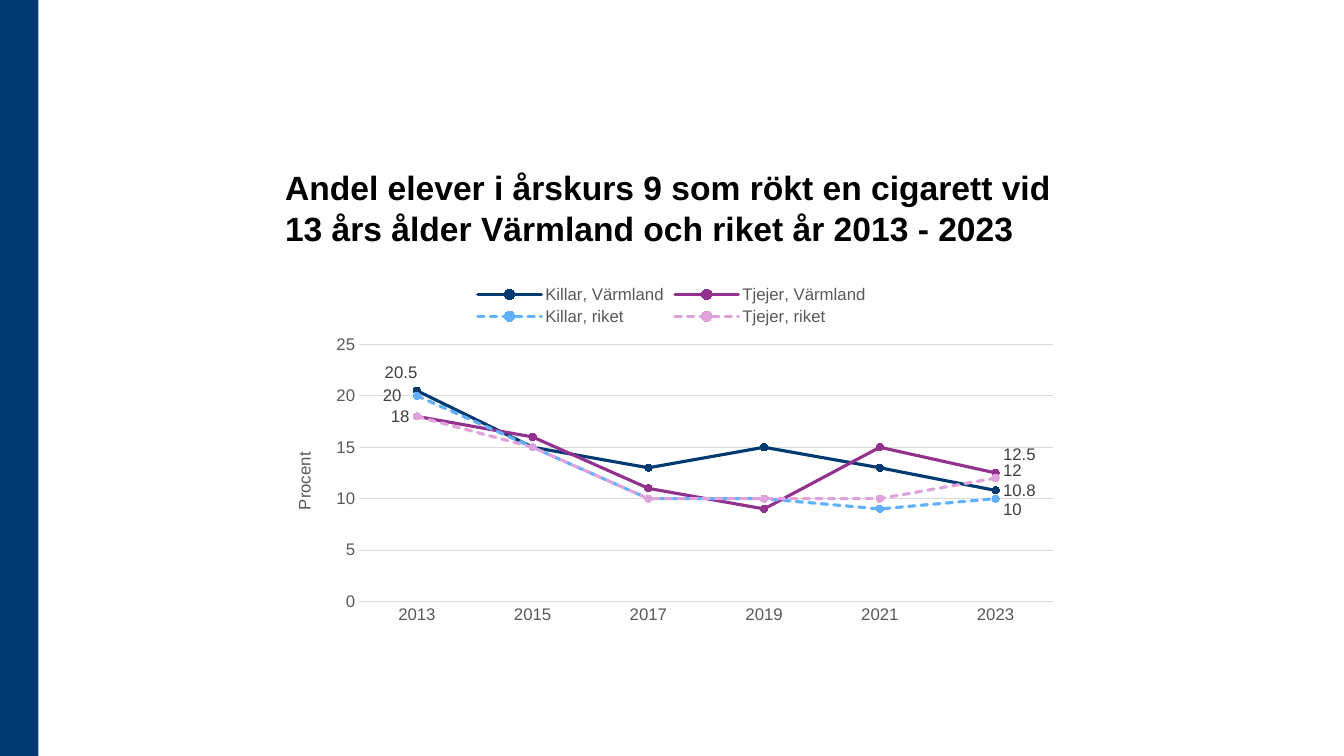
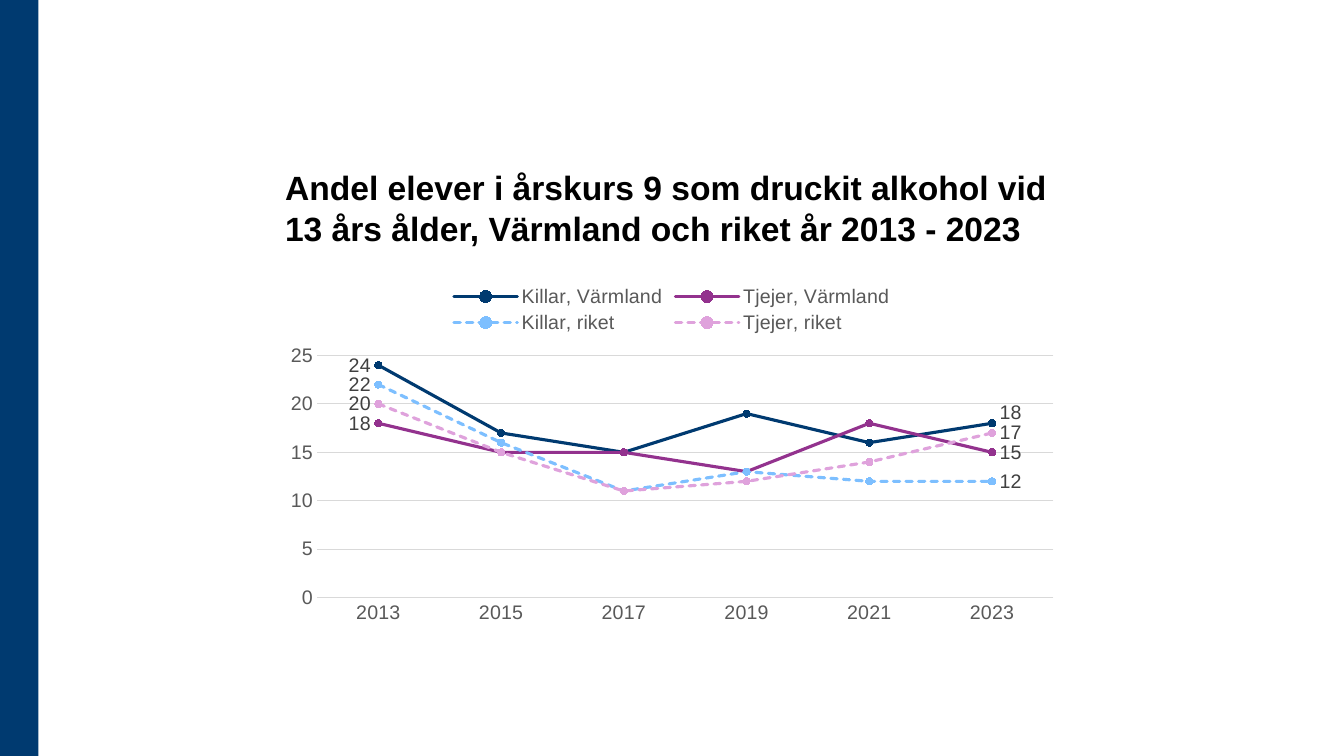
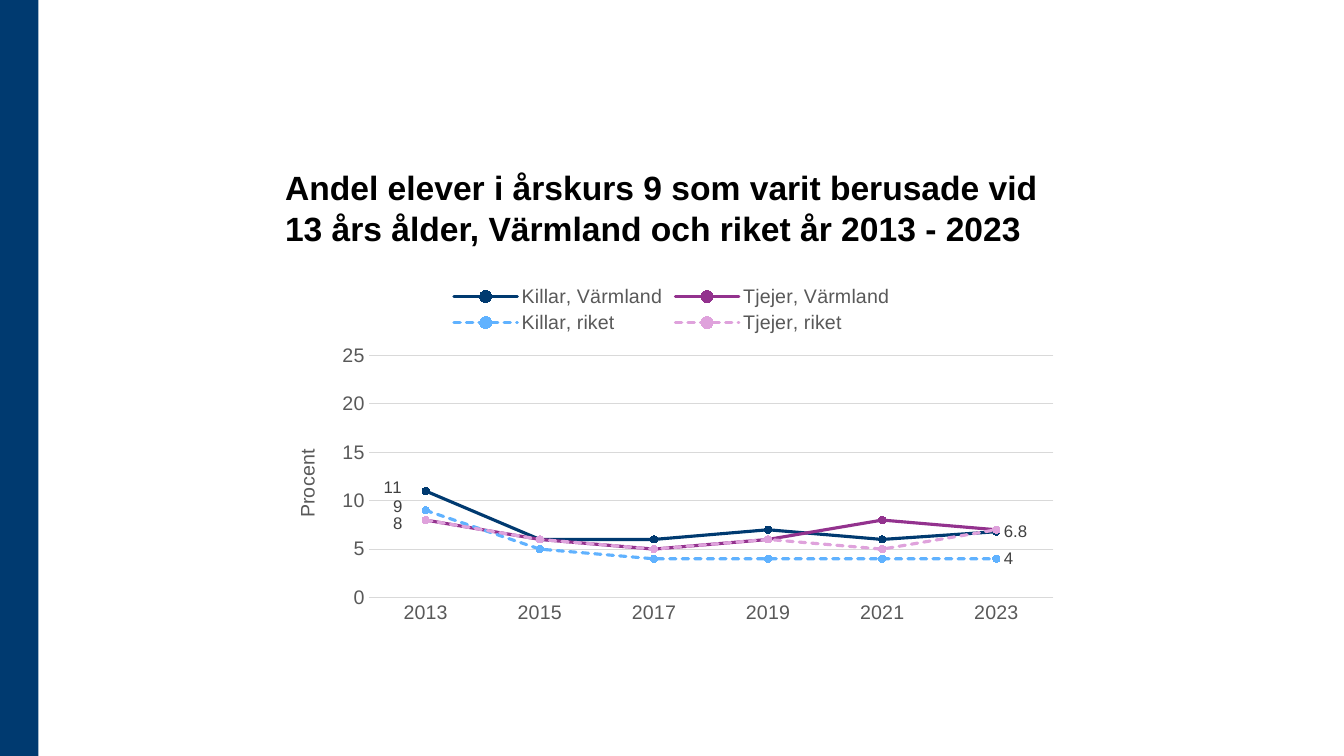
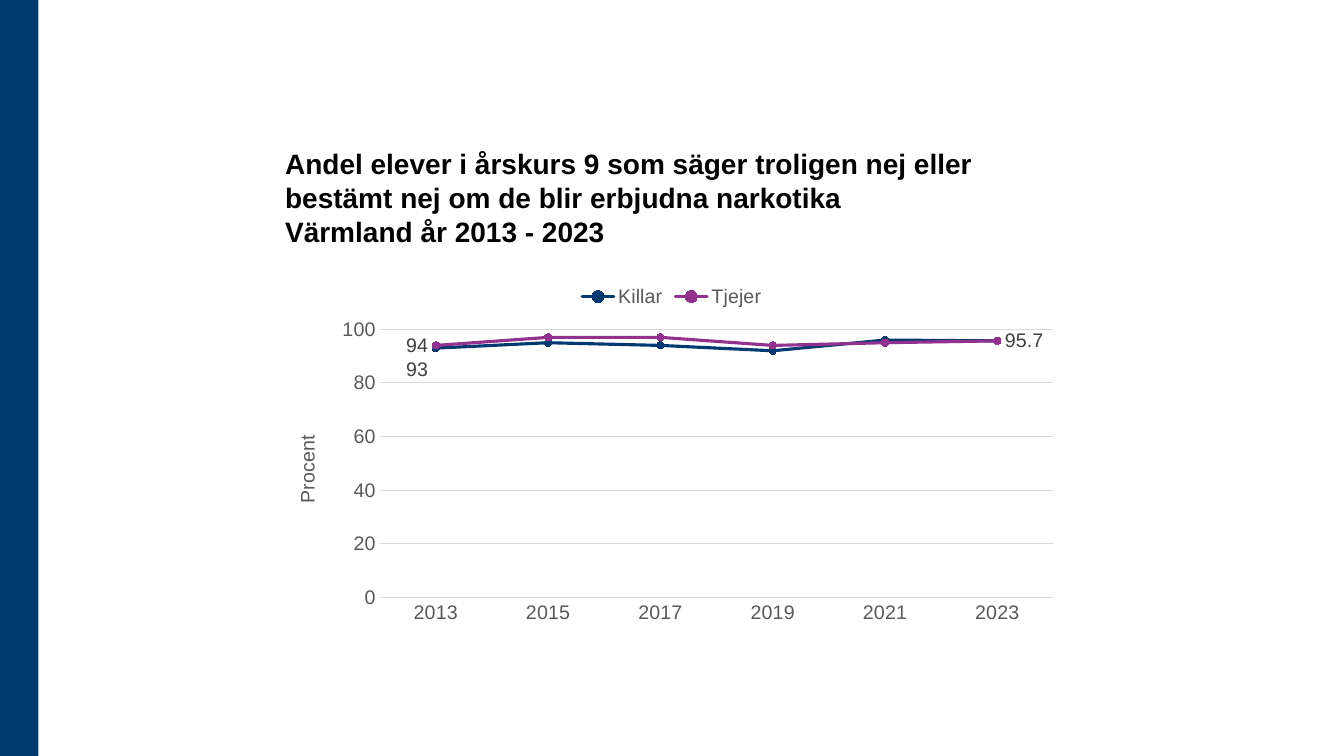
import lxml.etree
import pptx
import pptx.chart.data
import pptx.dml.color
import pptx.enum.chart
import pptx.enum.dml
import pptx.enum.shapes
import pptx.enum.text
import pptx.oxml.ns
import pptx.util

Cm = pptx.util.Cm
Pt = pptx.util.Pt
qn = pptx.oxml.ns.qn
rgb = pptx.dml.color.RGBColor.from_string
LEFT = pptx.enum.chart.XL_LABEL_POSITION.LEFT
RIGHT = pptx.enum.chart.XL_LABEL_POSITION.RIGHT
NO_TICK = pptx.enum.chart.XL_TICK_MARK.NONE

COLORS = {
    "navy": "003A70",
    "purple": "93328E",
    "blue": "60B2FF",
    "light_blue": "7DBFFF",
    "pink": "DFA2DC",
    "title": "000000",
    "axis": "595959",
    "label": "404040",
    "grid": "D9D9D9",
}
YEARS = ["2013", "2015", "2017", "2019", "2021", "2023"]
FIRST, LAST = 0, 5
CHART_WIDTH, CHART_HEIGHT = 20, 9
PLOT_RIGHT = 19.62


def style_font(font, size, color, bold=False):
    for name, value in {"name": "Arial", "size": Pt(size), "bold": bold}.items():
        setattr(font, name, value)
    font.color.rgb = rgb(COLORS[color])


def set_layout(parent, index, settings):
    for present in parent.findall(qn("c:layout")):
        parent.remove(present)
    layout = lxml.etree.Element(qn("c:layout"))
    manual = lxml.etree.SubElement(layout, qn("c:manualLayout"))
    for tag, value in settings.items():
        lxml.etree.SubElement(manual, qn(f"c:{tag}")).set("val", str(value))
    parent.insert(index, layout)


topics = [
    {
        "title": ["Andel elever i årskurs 9 som rökt en cigarett vid 13 års ålder Värmland och riket år 2013 - 2023"],
        "title_size": 24, "chart_size": 12, "label_size": 12,
        "maximum": 25, "step": 5,
        "plot": (2.12, 1.77, 8.25), "axis_title": (0.02, 0.49),
        "series": [
            ("Killar, Värmland", "navy", (20.5, 15, 13, 15, 13, 10.8),
             [(FIRST, LEFT, 0.01, -0.05), (LAST, RIGHT, 0, 0)]),
            ("Tjejer, Värmland", "purple", (18, 16, 11, 9, 15, 12.5),
             [(FIRST, LEFT, 0, 0), (LAST, RIGHT, 0, -0.05)]),
            ("Killar, riket", "blue", (20, 15, 10, 10, 9, 10),
             [(FIRST, LEFT, -0.01, 0), (LAST, RIGHT, 0, 0.03)]),
            ("Tjejer, riket", "pink", (18, 15, 10, 10, 10, 12),
             [(LAST, RIGHT, 0, -0.02)]),
        ],
    },
    {
        "title": ["Andel elever i årskurs 9 som druckit alkohol vid 13 års ålder, Värmland och riket år 2013 - 2023"],
        "title_size": 24, "chart_size": 14, "label_size": 14,
        "maximum": 25, "step": 5,
        "plot": (1.06, 2.05, 8.15), "axis_title": None,
        "series": [
            ("Killar, Värmland", "navy", (24, 17, 15, 19, 16, 18),
             [(FIRST, LEFT, 0, 0), (LAST, RIGHT, 0, -0.03)]),
            ("Tjejer, Värmland", "purple", (18, 15, 15, 13, 18, 15),
             [(FIRST, LEFT, 0, 0), (LAST, RIGHT, 0, 0)]),
            ("Killar, riket", "light_blue", (22, 16, 11, 13, 12, 12),
             [(FIRST, LEFT, 0, 0), (LAST, RIGHT, 0, 0)]),
            ("Tjejer, riket", "pink", (20, 15, 11, 12, 14, 17),
             [(FIRST, LEFT, 0, 0), (LAST, RIGHT, 0, 0)]),
        ],
    },
    {
        "title": ["Andel elever i årskurs 9 som varit berusade vid 13 års ålder, Värmland och riket år 2013 - 2023"],
        "title_size": 24, "chart_size": 14, "label_size": 12,
        "maximum": 25, "step": 5,
        "plot": (2.36, 2.05, 8.15), "axis_title": (0.02, 0.48),
        "series": [
            ("Killar, Värmland", "navy", (11, 6, 6, 7, 6, 6.8),
             [(FIRST, LEFT, -0.02, -0.01), (LAST, RIGHT, 0, 0)]),
            ("Tjejer, Värmland", "purple", (8, 6, 5, 6, 8, 7),
             [(FIRST, LEFT, -0.02, 0.01)]),
            ("Killar, riket", "blue", (9, 5, 4, 4, 4, 4),
             [(FIRST, LEFT, -0.02, -0.01), (LAST, RIGHT, 0, 0)]),
            ("Tjejer, riket", "pink", (8, 6, 5, 6, 5, 7), []),
        ],
    },
    {
        "title": ["Andel elever i årskurs 9 som säger troligen nej eller bestämt nej om de blir erbjudna narkotika",
                  "Värmland år 2013 - 2023"],
        "title_size": 20, "chart_size": 14, "label_size": 14,
        "maximum": 100, "step": 20,
        "plot": (2.64, 1.39, 8.15), "axis_title": (0.02, 0.44),
        "series": [
            ("Killar", "navy", (93, 95, 94, 92, 96, 95.7),
             [(FIRST, LEFT, 0, 0.06), (LAST, RIGHT, 0, 0)]),
            ("Tjejer", "purple", (94, 97, 97, 94, 95, 95.7),
             [(FIRST, LEFT, 0, 0)]),
        ],
    },
]

deck = pptx.Presentation()
deck.slide_width = Cm(33.87)
deck.slide_height = Cm(19.05)
title_layout = deck.slide_layouts[5]
heading = title_layout.placeholders[0]
for name, value in {"left": 6.93, "top": 2.69, "width": 20, "height": 3.68}.items():
    setattr(heading, name, Cm(value))

for number, topic in enumerate(topics):
    slide = deck.slides.add_slide(title_layout)
    if number == 0:
        band = slide.shapes.add_shape(
            pptx.enum.shapes.MSO_SHAPE.RECTANGLE, 0, 0, Cm(0.97), deck.slide_height)
        band.shadow.inherit = False
        band.fill.solid()
        band.fill.fore_color.rgb = rgb(COLORS["navy"])
        band.line.fill.background()
        title_layout.shapes.element.insert(2, band.element)

    title = slide.shapes.title.text_frame
    title_format = {
        "word_wrap": True,
        "auto_size": pptx.enum.text.MSO_AUTO_SIZE.NONE,
        "vertical_anchor": pptx.enum.text.MSO_ANCHOR.BOTTOM,
    }
    for name, value in title_format.items():
        setattr(title, name, value)
    sentence = title.paragraphs[0]
    sentence.alignment = pptx.enum.text.PP_ALIGN.LEFT
    sentence.line_spacing = 1.0
    for row, words in enumerate(topic["title"]):
        if row:
            sentence.add_line_break()
        run = sentence.add_run()
        run.text = words
        style_font(run.font, topic["title_size"], "title", True)

    figures = pptx.chart.data.CategoryChartData()
    figures.categories = YEARS
    for name, color, shares, labels in topic["series"]:
        figures.add_series(name, shares)
    chart = slide.shapes.add_chart(
        pptx.enum.chart.XL_CHART_TYPE.LINE_MARKERS,
        Cm(6.93), Cm(6.91), Cm(CHART_WIDTH), Cm(CHART_HEIGHT), figures).chart
    size = topic["chart_size"]
    chart.has_title = False
    style_font(chart.font, size, "title")
    chart.has_legend = True
    chart.legend.position = pptx.enum.chart.XL_LEGEND_POSITION.TOP
    chart.legend.include_in_layout = False
    style_font(chart.legend.font, size, "axis")
    chart.plots[0].vary_by_categories = False

    years, percent = chart.category_axis, chart.value_axis
    for axis in (years, percent):
        axis.major_tick_mark = NO_TICK
        axis.minor_tick_mark = NO_TICK
        style_font(axis.tick_labels.font, size, "axis")
    scale = {"minimum_scale": 0, "maximum_scale": topic["maximum"],
             "major_unit": topic["step"], "has_major_gridlines": True}
    for name, value in scale.items():
        setattr(percent, name, value)
    percent.format.line.fill.background()
    for rule in (years.format.line, percent.major_gridlines.format.line):
        rule.color.rgb = rgb(COLORS["grid"])
        rule.width = Pt(0.75)

    plot_left, plot_top, plot_bottom = topic["plot"]
    plot_area = chart.element.xpath(".//c:plotArea")[0]
    set_layout(plot_area, 0, {
        "layoutTarget": "inner", "xMode": "edge", "yMode": "edge",
        "x": plot_left / CHART_WIDTH, "y": plot_top / CHART_HEIGHT,
        "w": (PLOT_RIGHT - plot_left) / CHART_WIDTH,
        "h": (plot_bottom - plot_top) / CHART_HEIGHT})
    if topic["axis_title"]:
        percent.axis_title.text_frame.text = "Procent"
        style_font(percent.axis_title.text_frame.paragraphs[0].runs[0].font, size, "axis")
        title_x, title_y = topic["axis_title"]
        set_layout(percent.axis_title.element, 1, {
            "xMode": "edge", "yMode": "edge", "x": title_x, "y": title_y})

    for position, (series, row) in enumerate(zip(chart.plots[0].series, topic["series"]), 1):
        name, color, shares, labels = row
        series.smooth = False
        series.format.line.color.rgb = rgb(COLORS[color])
        series.format.line.width = Pt(2.25)
        if name.endswith("riket"):
            series.format.line.dash_style = pptx.enum.dml.MSO_LINE.SQUARE_DOT
        series.marker.style = pptx.enum.chart.XL_MARKER_STYLE.CIRCLE
        series.marker.size = 5
        series.marker.format.fill.solid()
        series.marker.format.fill.fore_color.rgb = rgb(COLORS[color])
        series.marker.format.line.color.rgb = rgb(COLORS[color])
        if labels:
            series.data_labels.show_value = False
        for point, side, shift_x, shift_y in labels:
            label = series.points[point].data_label
            label.position = side
            style_font(label.font, topic["label_size"], "label")
            if shift_x or shift_y:
                shifted = chart.element.xpath(
                    f'.//c:ser[{position}]/c:dLbls/c:dLbl[c:idx/@val="{point}"]')[0]
                set_layout(shifted, 1, {"x": shift_x, "y": shift_y})
    for stroke in chart.element.xpath(".//c:ser/c:spPr/a:ln"):
        stroke.set("cap", "rnd")
    for leader in chart.element.xpath(".//c:showLeaderLines"):
        leader.set("val", "0")

deck.save("out.pptx")
